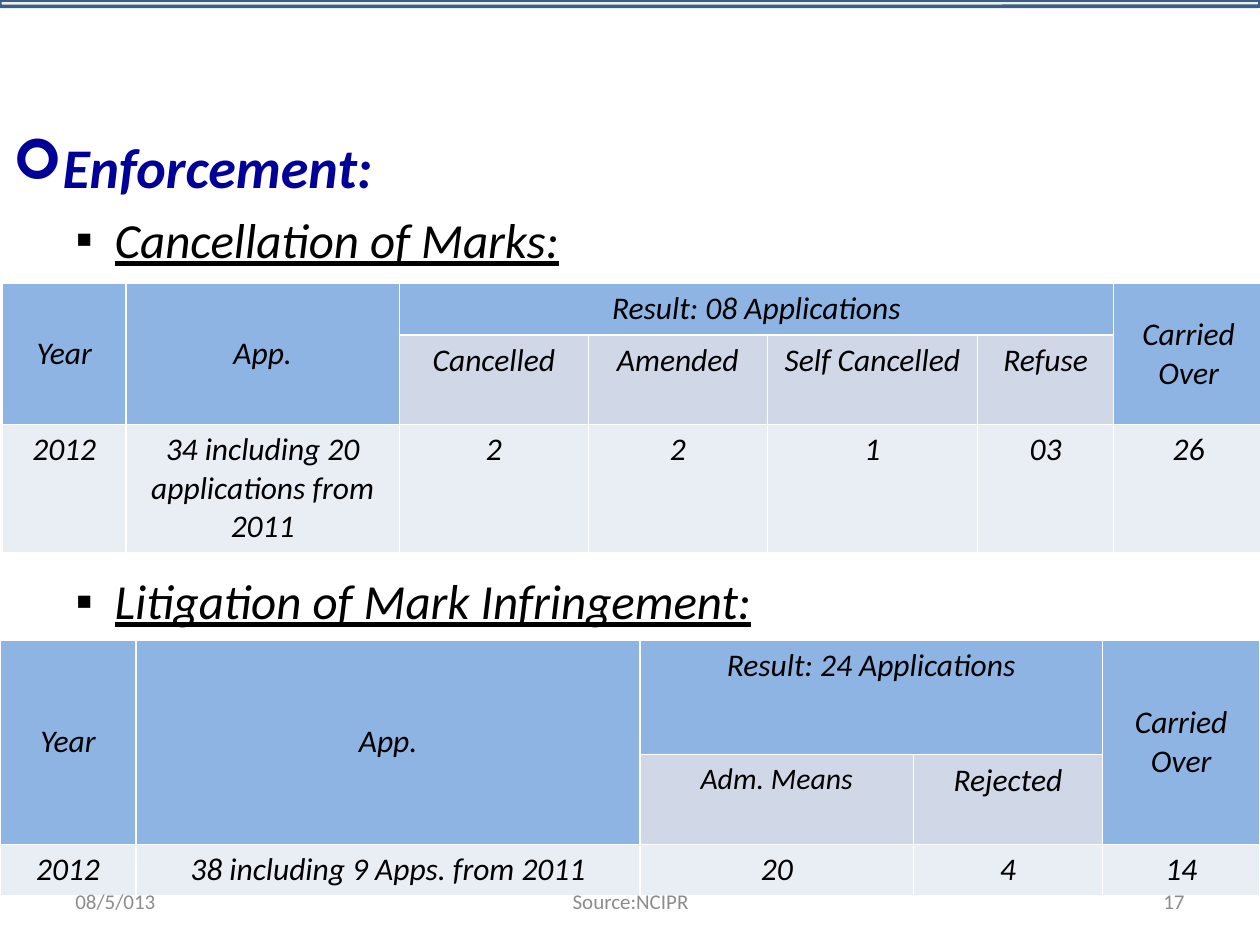
from dataclasses import dataclass

from lxml import etree
from pptx import Presentation
from pptx.dml.color import RGBColor
from pptx.enum.shapes import MSO_SHAPE
from pptx.enum.text import MSO_ANCHOR, MSO_AUTO_SIZE, PP_ALIGN
from pptx.oxml.ns import qn
from pptx.util import Inches, Pt

LEFT, CENTER, RIGHT = PP_ALIGN.LEFT, PP_ALIGN.CENTER, PP_ALIGN.RIGHT
TOP, MIDDLE = MSO_ANCHOR.TOP, MSO_ANCHOR.MIDDLE


@dataclass(frozen=True)
class Theme:
    font: str = "Calibri"
    ink: str = "000000"
    accent: str = "000099"
    muted: str = "8C8C8C"
    head: str = "8EB4E3"
    subhead: str = "D0D8E8"
    data: str = "E9EDF4"
    grid: str = "FFFFFF"
    bar: str = "EBF1DE"
    bar_line: str = "3A5F8C"
    heading: int = 32
    subheading: int = 28
    cell: int = 18
    cell_small: int = 17
    footer: int = 12


T = Theme()
W, H = 10, 7.5

HEADINGS = [
    dict(text="Enforcement:", bullet="➢", left=0.38, hang=0.38, before=6.4,
         size=T.heading, color=T.accent, bold=True),
    dict(text="Cancellation of Marks:", bullet="▪", left=0.81, hang=0.31, before=5.6,
         size=T.subheading, underline=True, level=1),
    dict(text="Litigation of Mark Infringement:", bullet="▪", left=0.81, hang=0.31, before=173,
         size=T.subheading, underline=True, level=1),
]

TABLES = [
    dict(at=(0.02, 2.25),
         cols=[0.98, 2.17, 1.5, 1.42, 1.67, 1.08, 1.19],
         rows=[0.41, 0.71, 1.01],
         result="Result: 08 Applications",
         outcomes=["Cancelled", "Amended", "Self Cancelled", "Refuse"],
         data=["2012", "34 including 20 applications from 2011", "2", "2", "1", "03", "26"]),
    dict(at=(0, 5.08),
         cols=[1.08, 4, 2.17, 1.5, 1.25],
         rows=[0.91, 0.71, 0.41],
         result="Result: 24 Applications",
         outcomes=["Adm. Means", "Rejected"],
         data=["2012", "38 including 9 Apps. from 2011", "20", "4", "14"]),
]
SMALL_CELLS = {"Adm. Means"}

FOOTERS = [
    ("08/5/013", 0.5, 2.33, LEFT),
    ("Source:NCIPR", 3.42, 3.17, CENTER),
    ("17", 7.17, 2.33, RIGHT),
]


def write(p, text, size=T.cell, color=T.ink, bold=False, italic=True,
          underline=False, align=LEFT):
    p.alignment = align
    r = p.add_run()
    r.text = text
    f = r.font
    f.name, f.size, f.color.rgb = T.font, Pt(size), RGBColor.from_string(color)
    f.bold, f.italic, f.underline = bold, italic, underline


def set_bullet(p, char, left, hang):
    pPr = p._p.get_or_add_pPr()
    pPr.set("marL", str(Inches(left)))
    pPr.set("indent", str(-Inches(hang)))
    etree.SubElement(pPr, qn("a:buFont"), typeface="Wingdings" if char == "➢" else "Arial")
    etree.SubElement(pPr, qn("a:buChar"), char=char)


def set_borders(cell, width=1):
    tcPr = cell._tc.get_or_add_tcPr()
    for i, side in enumerate(("a:lnL", "a:lnR", "a:lnT", "a:lnB")):
        ln = etree.Element(qn(side), w=str(Pt(width)))
        fill = etree.SubElement(ln, qn("a:solidFill"))
        etree.SubElement(fill, qn("a:srgbClr"), val=T.grid)
        tcPr.insert(i, ln)


def add_headings(sp):
    sp.left, sp.top, sp.width, sp.height = Inches(0), Inches(1), Inches(W), Inches(5.33)
    tf = sp.text_frame
    tf.word_wrap, tf.auto_size, tf.vertical_anchor = True, MSO_AUTO_SIZE.NONE, TOP
    for i, h in enumerate(HEADINGS):
        fmt = dict(h)
        p = tf.add_paragraph() if i else tf.paragraphs[0]
        p.level = fmt.pop("level", 0)
        p.space_before = Pt(fmt.pop("before"))
        set_bullet(p, fmt.pop("bullet"), fmt.pop("left"), fmt.pop("hang"))
        write(p, **fmt)


def add_result_table(s, at, cols, rows, result, outcomes, data):
    n = len(cols)
    last = n - 1
    x, y = at
    tbl = s.shapes.add_table(len(rows), n, Inches(x), Inches(y),
                             Inches(sum(cols)), Inches(sum(rows))).table
    for c, width in enumerate(cols):
        tbl.columns[c].width = Inches(width)
    for r, height in enumerate(rows):
        tbl.rows[r].height = Inches(height)

    spanning = {0: "Year", 1: "App.", last: "Carried Over"}
    texts = {(0, c): text for c, text in spanning.items()}
    texts[0, 2] = result
    texts.update({(1, c): text for c, text in enumerate(outcomes, 2)})
    texts.update({(2, c): text for c, text in enumerate(data)})

    for r, fill in enumerate((T.head, T.subhead, T.data)):
        for c in range(n):
            cell = tbl.cell(r, c)
            tall = r < 2 and c in spanning
            cell.fill.solid()
            cell.fill.fore_color.rgb = RGBColor.from_string(T.head if tall else fill)
            cell.vertical_anchor = MIDDLE if tall else TOP
            set_borders(cell)
            if (r, c) in texts:
                text = texts[r, c]
                size = T.cell_small if text in SMALL_CELLS else T.cell
                write(cell.text_frame.paragraphs[0], text, size=size, align=CENTER)
    for c in spanning:
        tbl.cell(0, c).merge(tbl.cell(1, c))
    tbl.cell(0, 2).merge(tbl.cell(0, last - 1))


def add_top_bar(s):
    sp = s.shapes.add_shape(MSO_SHAPE.ROUNDED_RECTANGLE, 0, 0, Inches(W), Inches(0.05))
    sp.shadow.inherit = False
    sp.fill.solid()
    sp.fill.fore_color.rgb = RGBColor.from_string(T.bar)
    sp.line.color.rgb = RGBColor.from_string(T.bar_line)
    sp.line.width = Pt(2)


def add_footer(s, text, left, width, align):
    sp = s.shapes.add_textbox(Inches(left), Inches(6.95), Inches(width), Inches(0.4))
    tf = sp.text_frame
    tf.word_wrap, tf.vertical_anchor = True, MIDDLE
    write(tf.paragraphs[0], text, size=T.footer, color=T.muted, italic=False, align=align)


def main():
    prs = Presentation()
    prs.slide_width, prs.slide_height = Inches(W), Inches(H)
    s = prs.slides.add_slide(prs.slide_layouts[1])
    title = s.shapes.title._element
    title.getparent().remove(title)
    add_headings(s.placeholders[1])
    for table in TABLES:
        add_result_table(s, **table)
    add_top_bar(s)
    for footer in FOOTERS:
        add_footer(s, *footer)
    prs.save("out.pptx")


if __name__ == "__main__":
    main()
